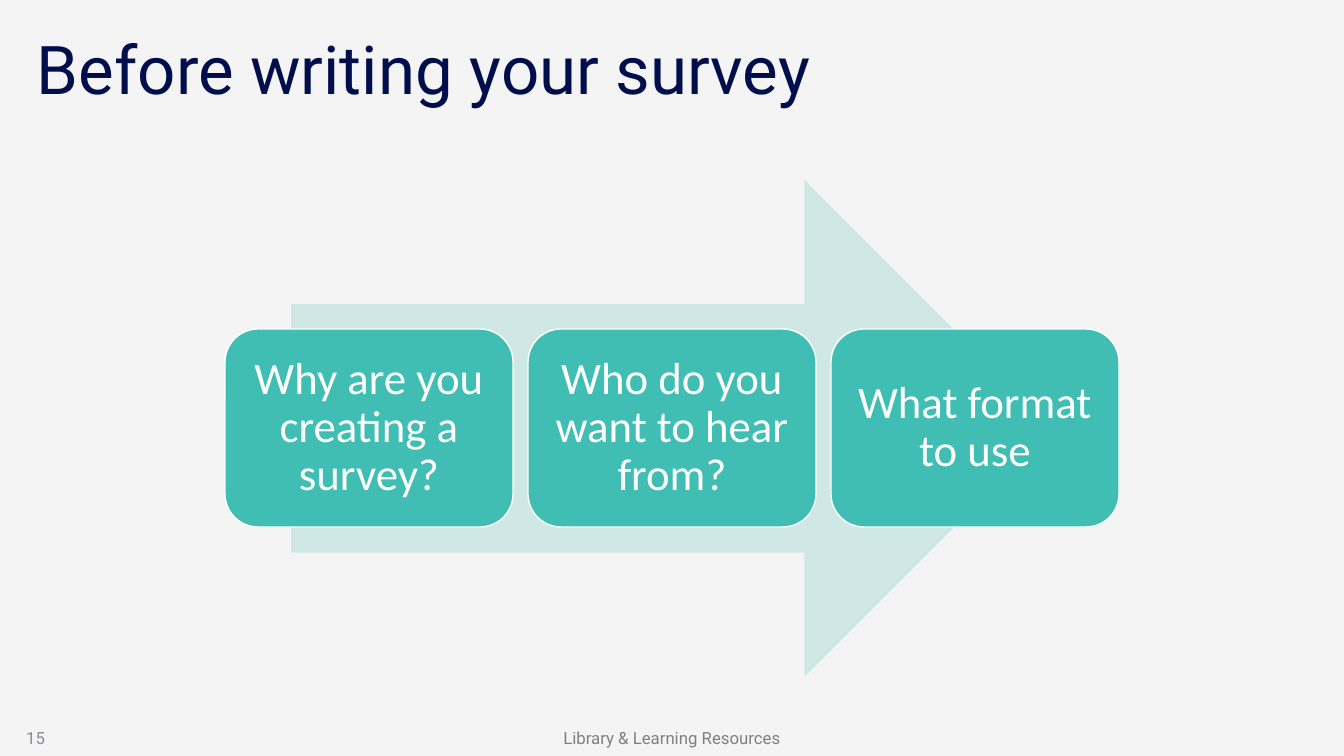
"""Build the slide on what to settle before writing a survey."""
from dataclasses import dataclass

from pptx import Presentation, util as u
from pptx.dml.color import RGBColor
from pptx.enum import shapes, text

PX = 12192000 / 1344
HUES = {
    "back": "F4F4F4",
    "navy": "000E4C",
    "gray": "808080",
    "page": "8C8C96",
    "pale": "CFE8E5",
    "teal": "40BEB3",
    "white": "FFFFFF",
}
TOP, MID = text.MSO_ANCHOR.TOP, text.MSO_ANCHOR.MIDDLE
LEFT, MIDDLE, RIGHT = text.PP_ALIGN.LEFT, text.PP_ALIGN.CENTER, text.PP_ALIGN.RIGHT


@dataclass(frozen=True)
class Area:
    left: int
    top: int
    width: int
    height: int


@dataclass(frozen=True)
class Style:
    font: str
    size: int
    hue: str
    align: text.PP_ALIGN
    anchor: text.MSO_ANCHOR
    inset: tuple[int, int, int, int]
    lines: float = 1.0


@dataclass(frozen=True)
class Label:
    words: str
    area: Area
    style: Style


def px(count: int) -> u.Emu:
    return u.Emu(round(count * PX))


def place(area: Area) -> list[u.Emu]:
    return [px(n) for n in (area.left, area.top, area.width, area.height)]


def color(name: str) -> RGBColor:
    return RGBColor.from_string(HUES[name])


def write(shape, words: str, style: Style) -> None:
    frame = shape.text_frame
    frame.word_wrap = True
    frame.vertical_anchor = style.anchor
    frame.margin_left, frame.margin_top, frame.margin_right, frame.margin_bottom = map(
        px, style.inset
    )
    para = frame.paragraphs[0]
    para.alignment = style.align
    para.line_spacing = style.lines
    run = para.add_run()
    run.text = words
    run.font.name = style.font
    run.font.size = u.Pt(style.size)
    run.font.color.rgb = color(style.hue)


def draw(slide, kind: shapes.MSO_SHAPE, area: Area, fill: str, line: str = ""):
    shape = slide.shapes.add_shape(kind, *place(area))
    shape.shadow.inherit = False
    shape.fill.solid()
    shape.fill.fore_color.rgb = color(fill)
    if line:
        shape.line.color.rgb = color(line)
        shape.line.width = u.Pt(1)
    else:
        shape.line.fill.background()
    return shape


TITLE = Style("Roboto", 48, "navy", LEFT, TOP, (0, 0, 0, 0), 0.9)
FOOT = Style("Roboto", 12, "gray", MIDDLE, MID, (10, 5, 10, 5))
PAGE = Style("Roboto", 12, "page", RIGHT, MID, (10, 5, 20, 5))
STEP = Style("Calibri", 32, "white", MIDDLE, MID, (13, 13, 13, 13), 0.9)

LABELS = [
    Label("Before writing your survey", Area(37, 36, 1000, 76), TITLE),
    Label("Library & Learning Resources", Area(445, 720, 454, 36), FOOT),
    Label("15", Area(1, 720, 64, 35), PAGE),
]
STEPS = [
    "Why are you creating a survey?",
    "Who do you want to hear from?",
    "What format to use",
]
ARROW = Area(291, 180, 762, 497)
FIRST = Area(225, 329, 288, 198)
GAP = 15


def main() -> None:
    deck = Presentation()
    deck.slide_width, deck.slide_height = px(1344), px(756)
    slide = deck.slides.add_slide(deck.slide_layouts[6])
    slide.background.fill.solid()
    slide.background.fill.fore_color.rgb = color("back")

    for label in LABELS:
        box = slide.shapes.add_textbox(*place(label.area))
        write(box, label.words, label.style)

    draw(slide, shapes.MSO_SHAPE.RIGHT_ARROW, ARROW, "pale")
    for i, words in enumerate(STEPS):
        left = FIRST.left + i * (FIRST.width + GAP)
        area = Area(left, FIRST.top, FIRST.width, FIRST.height)
        card = draw(slide, shapes.MSO_SHAPE.ROUNDED_RECTANGLE, area, "teal", "white")
        write(card, words, STEP)

    deck.save("out.pptx")


if __name__ == "__main__":
    main()
